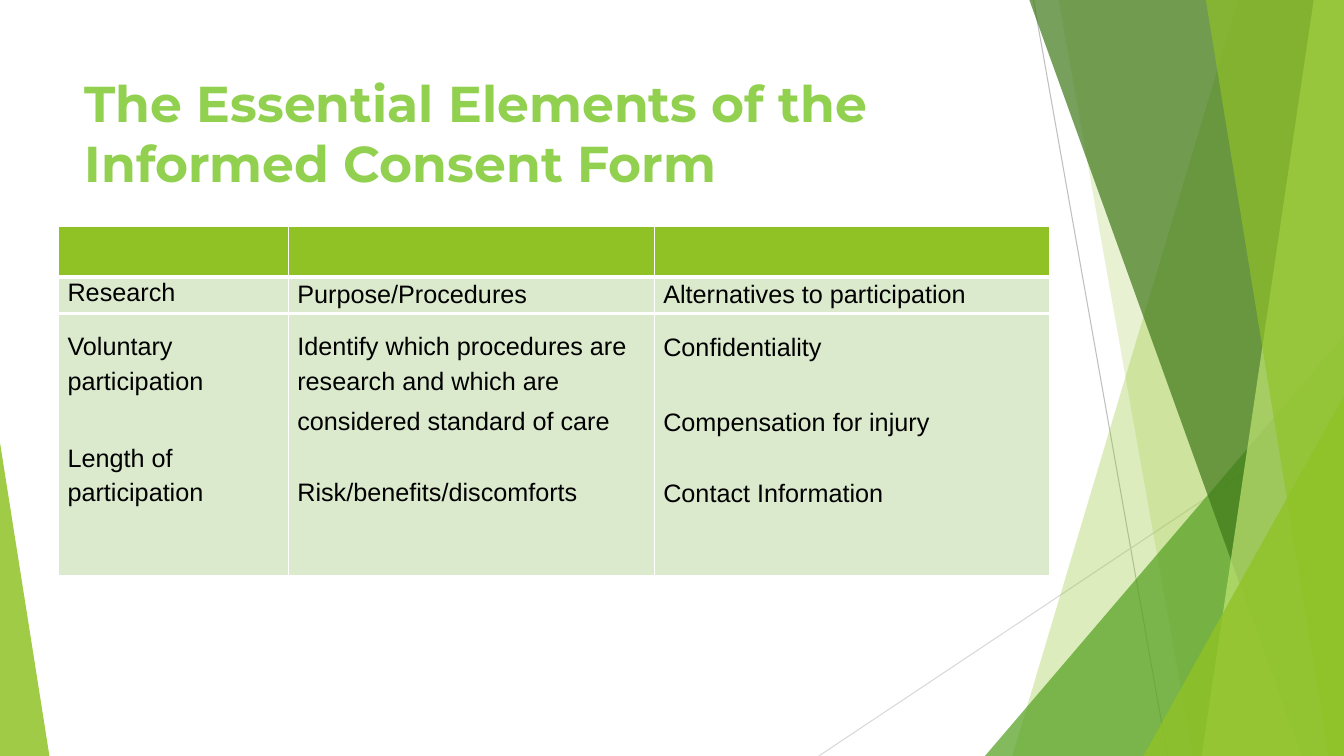
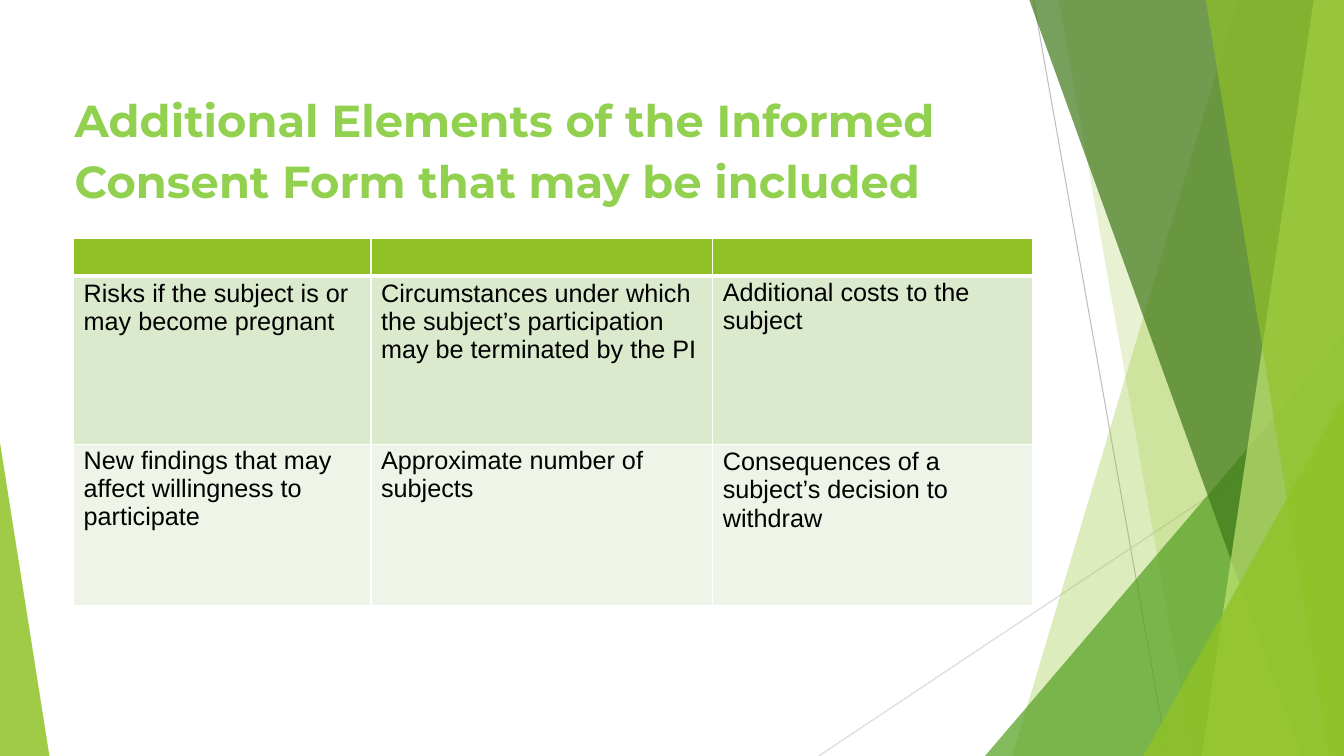
from dataclasses import dataclass

from lxml.etree import SubElement
from pptx import Presentation
from pptx.dml.color import RGBColor
from pptx.enum.shapes import MSO_CONNECTOR as Connector
from pptx.enum.text import MSO_AUTO_SIZE as AutoSize, MSO_ANCHOR as Anchor
from pptx.oxml.ns import qn
from pptx.slide import Slide
from pptx.text.text import TextFrame
from pptx.util import Inches, Pt

WIDTH, HEIGHT = Inches(13.33), Inches(7.5)
GREEN, DEEP_GREEN, FOREST, LIME = "90C226", "54A021", "3F7819", "C0E474"
TITLE_GREEN, PALE_GREEN, MIST = "92D050", "DBE9CD", "EEF4E8"
WHITE, BLACK = "FFFFFF", "000000"
TITLE_FONT, BODY_FONT = "Montserrat", "Arial"

Point = tuple[float, float]


@dataclass(frozen=True)
class Ray:
    start: Point
    end: Point
    colour: str


@dataclass(frozen=True)
class Facet:
    points: tuple[Point, ...]
    colour: str
    opacity: int


@dataclass(frozen=True)
class Title:
    text: str
    left: float
    top: float
    width: float
    height: float
    size: int


@dataclass(frozen=True)
class Entry:
    text: str = ""
    before: float = 0
    line: float | None = None


@dataclass(frozen=True)
class Row:
    height: float
    fill: str
    entries: tuple[Entry, ...]
    top: int = 0
    bottom: int = 0


@dataclass(frozen=True)
class Grid:
    left: float
    top: float
    columns: tuple[float, ...]
    rows: tuple[Row, ...]
    indent: float


RAYS = (
    Ray((76.9, 0), (86.87, 100), "BFBFBF"),
    Ray((100, 53.73), (60.92, 100), "D9D9D9"),
)

RIGHT_TOP, RIGHT_BOTTOM = (100, 0), (100, 100)


def band(top: float, bottom: float, colour: str, opacity: int) -> Facet:
    return Facet((RIGHT_TOP, (top, 0), (bottom, 100), RIGHT_BOTTOM), colour, opacity)


def corner(height: float, foot: float, colour: str, opacity: int, side: float = 100) -> Facet:
    return Facet(((side, height), (foot, 100), (side, 100)), colour, opacity)


FACETS = (
    band(92.12, 75.32, GREEN, 30),
    band(78.77, 88.75, GREEN, 20),
    corner(44.4, 73.29, DEEP_GREEN, 72),
    band(76.59, 96.85, FOREST, 70),
    band(97.75, 89.42, LIME, 70),
    band(89.72, 98.87, GREEN, 65),
    corner(52.4, 85.07, GREEN, 80),
    corner(58.53, 3.68, GREEN, 85, side=0),
)

EMPTY = Entry()

ESSENTIAL = Grid(4.35, 30, (17.1, 27.23, 29.41), (
    Row(6.67, GREEN, (EMPTY,) * 3, 1, 3),
    Row(4.8, PALE_GREEN, (
        Entry("Research", 1),
        Entry("Purpose/Procedures", 2.2),
        Entry("Alternatives to participation", 2.2)), 3, 3),
    Row(11.73, PALE_GREEN, (
        Entry("Voluntary participation", 8.8, 25),
        Entry("Identify which procedures are research and which are", 8.8, 25),
        Entry("Confidentiality", 14.5)), 3),
    Row(4.67, PALE_GREEN, (
        EMPTY,
        Entry("considered standard of care", line=23.8),
        Entry("Compensation for injury", 4.5))),
    Row(4.13, PALE_GREEN, (Entry("Length of", 5.2), EMPTY, EMPTY)),
    Row(13.6, PALE_GREEN, (
        Entry("participation", line=24.2),
        Entry("Risk/benefits/discomforts", line=24.2),
        Entry("Contact Information", 5)), 0, 1),
), 0.09)

ADDITIONAL = Grid(5.48, 31.47, (22.13, 25.43, 23.78), (
    Row(5.07, GREEN, (EMPTY,) * 3, 1, 3),
    Row(22.27, PALE_GREEN, (
        Entry("Risks if the subject is or may become pregnant", 2.5),
        Entry("Circumstances under which the subject’s participation "
              "may be terminated by the PI", 2.5),
        Entry("Additional costs to the subject", 1.5)), 3, 1),
    Row(21.33, MIST, (
        Entry("New findings that may affect willingness to participate", 1.4),
        Entry("Approximate number of subjects", 1.4),
        Entry("Consequences of a subject’s decision to withdraw", 2.4)), 1, 1),
), 0.1)

PAGES = (
    (Title("The Essential Elements of the Informed Consent Form",
           6.23, 9.2, 63.69, 16.4, 36), ESSENTIAL),
    (Title("Additional Elements of the Informed Consent Form that may be included",
           5.48, 11.07, 66.39, 16, 32), ADDITIONAL),
)


def across(share: float) -> int:
    return round(WIDTH * share / 100)


def down(share: float) -> int:
    return round(HEIGHT * share / 100)


def place(point: Point) -> tuple[int, int]:
    return across(point[0]), down(point[1])


def paint(target, colour: str) -> None:
    target.solid()
    target.fore_color.rgb = RGBColor.from_string(colour)


def write_text(frame: TextFrame, text: str, *, size: float, font: str, colour: str,
               bold: bool = False, before: float = 0, line: float | None = None,
               indent: float = 0) -> None:
    paragraph = frame.paragraphs[0]
    paragraph.space_before = Pt(before)
    if line:
        paragraph.line_spacing = Pt(line)
    properties = paragraph._p.get_or_add_pPr()
    properties.set("marL", str(Inches(indent)))
    properties.set("indent", "0")
    run = paragraph.add_run()
    run.text = text
    run.font.size = Pt(size)
    run.font.name = font
    run.font.bold = bold
    run.font.color.rgb = RGBColor.from_string(colour)


def draw_ray(slide: Slide, ray: Ray) -> None:
    connector = slide.shapes.add_connector(
        Connector.STRAIGHT, *place(ray.start), *place(ray.end))
    paint(connector.line.fill, ray.colour)
    connector.line.width = Pt(0.75)
    SubElement(connector._element.spPr, qn("a:effectLst"))


def draw_facet(slide: Slide, facet: Facet) -> None:
    first, *others = map(place, facet.points)
    builder = slide.shapes.build_freeform(*first)
    builder.add_line_segments(others, close=True)
    shape = builder.convert_to_shape()
    shape.shadow.inherit = False
    shape.line.fill.background()
    paint(shape.fill, facet.colour)
    colour = shape._element.spPr.find(qn("a:solidFill"))[0]
    SubElement(colour, qn("a:alpha")).set("val", str(facet.opacity * 1000))


def draw_title(slide: Slide, title: Title) -> None:
    box = slide.shapes.add_textbox(
        across(title.left), down(title.top), across(title.width), down(title.height))
    frame = box.text_frame
    frame.word_wrap = True
    frame.auto_size = AutoSize.NONE
    frame.vertical_anchor = Anchor.TOP
    frame.margin_left = frame.margin_right = frame.margin_bottom = 0
    frame.margin_top = Inches(0.03)
    write_text(frame, title.text, size=title.size, font=TITLE_FONT, colour=TITLE_GREEN,
               bold=True, before=2.1, line=43, indent=0.01)


def set_borders(cell, top: int, bottom: int) -> None:
    properties = cell._tc.get_or_add_tcPr()
    for side, width in (("L", 1), ("R", 1), ("T", top), ("B", bottom)):
        border = SubElement(properties, qn(f"a:ln{side}"))
        border.set("w", str(Pt(width)))
        if width:
            fill = SubElement(border, qn("a:solidFill"))
            SubElement(fill, qn("a:srgbClr")).set("val", WHITE)
        else:
            SubElement(border, qn("a:noFill"))


def draw_grid(slide: Slide, grid: Grid) -> None:
    table = slide.shapes.add_table(
        len(grid.rows), len(grid.columns), across(grid.left), down(grid.top),
        across(sum(grid.columns)), down(sum(row.height for row in grid.rows))).table
    table.first_row = table.horz_banding = False
    for column, width in zip(table.columns, grid.columns):
        column.width = across(width)
    for table_row, row in zip(table.rows, grid.rows):
        table_row.height = down(row.height)
        for cell, entry in zip(table_row.cells, row.entries):
            cell.margin_left = cell.margin_right = cell.margin_bottom = 0
            cell.margin_top = Pt(entry.before)
            set_borders(cell, row.top, row.bottom)
            paint(cell.fill, row.fill)
            if entry.text:
                write_text(cell.text_frame, entry.text, size=18, font=BODY_FONT,
                           colour=BLACK, before=entry.before, line=entry.line,
                           indent=grid.indent)


def main() -> None:
    presentation = Presentation()
    presentation.slide_width, presentation.slide_height = WIDTH, HEIGHT
    for title, grid in PAGES:
        slide = presentation.slides.add_slide(presentation.slide_layouts[6])
        paint(slide.background.fill, WHITE)
        for ray in RAYS:
            draw_ray(slide, ray)
        for facet in FACETS:
            draw_facet(slide, facet)
        draw_title(slide, title)
        draw_grid(slide, grid)
    presentation.save("out.pptx")


if __name__ == "__main__":
    main()
